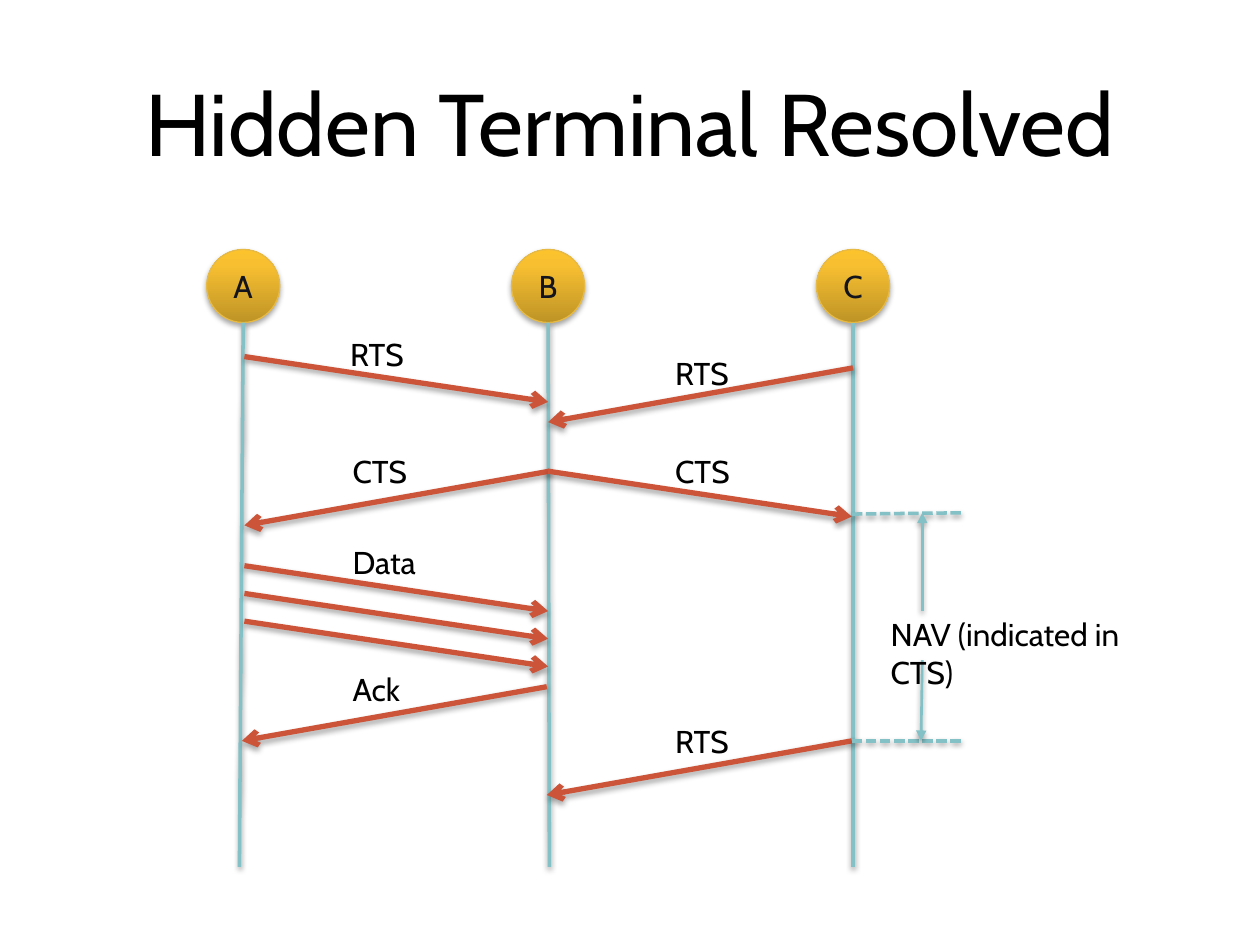
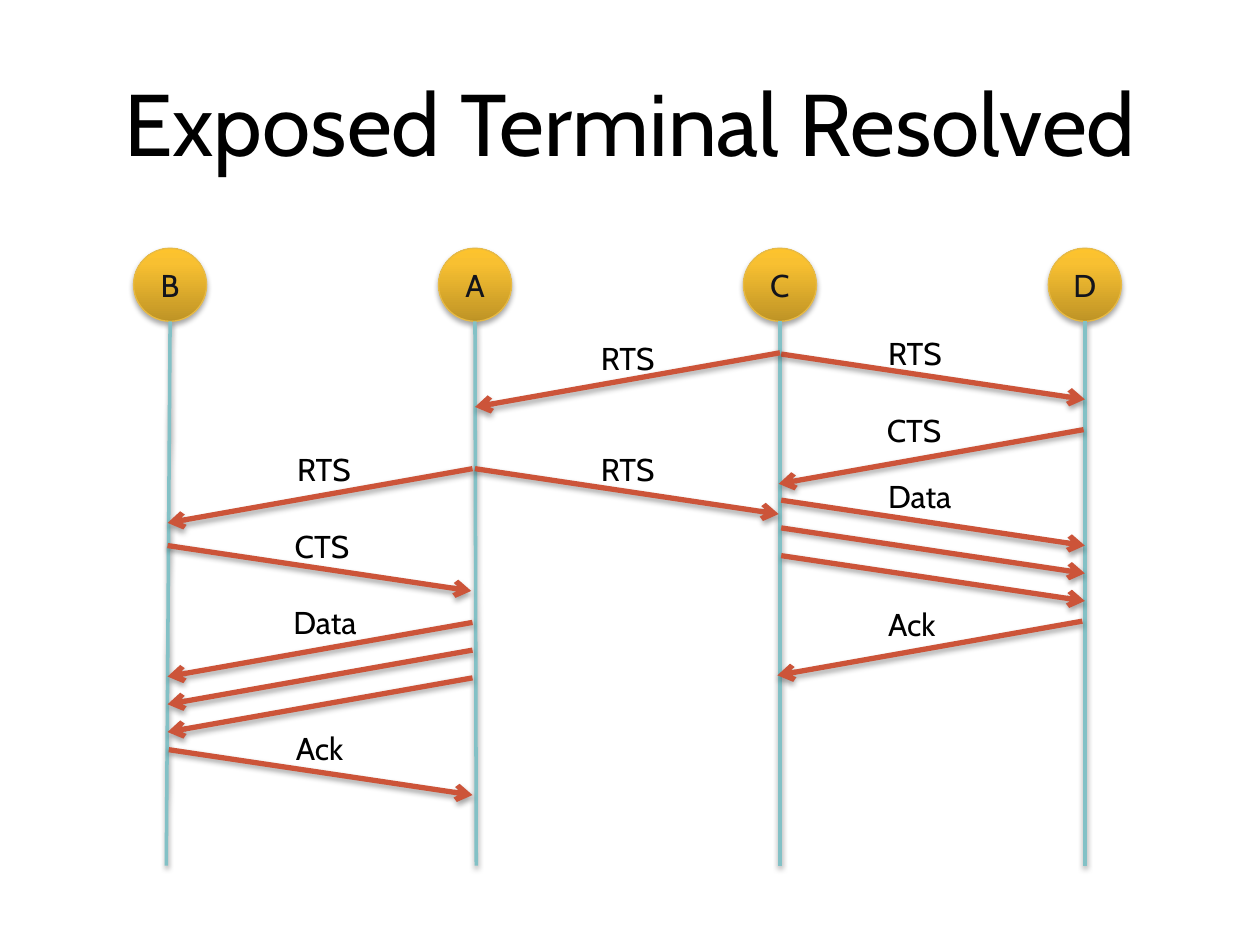
from lxml.etree import SubElement
from pptx import Presentation
from pptx.dml.color import RGBColor
from pptx.enum.dml import MSO_LINE
from pptx.enum.shapes import MSO_CONNECTOR, MSO_SHAPE
from pptx.enum.text import MSO_ANCHOR as Anchor, MSO_AUTO_SIZE as Fit, PP_ALIGN as Align
from pptx.oxml import parse_xml
from pptx.oxml.ns import nsdecls, qn
from pptx.util import Pt

PX = 9144  # 100 px to the inch
FONT = "Cabin"
HEX = {"ink": "000000", "name": "13141C", "rim": "E7BA45", "life": "83C1C6",
       "msg": "CC5439", "low": "BF9426", "mid": "F8C031", "top": "FDC32D"}

GOLD = f"""<a:gradFill {nsdecls("a")} rotWithShape="1"><a:gsLst>
<a:gs pos="0"><a:srgbClr val="{HEX['low']}"/></a:gs>
<a:gs pos="80000"><a:srgbClr val="{HEX['mid']}"/></a:gs>
<a:gs pos="100000"><a:srgbClr val="{HEX['top']}"/></a:gs>
</a:gsLst><a:lin ang="16200000" scaled="0"/></a:gradFill>"""
SHADE = f"""<a:effectLst {nsdecls("a")}>
<a:outerShdw blurRad="40000" dist="%d" dir="5400000" rotWithShape="0">
<a:srgbClr val="000000"><a:alpha val="%d"/></a:srgbClr></a:outerShdw></a:effectLst>"""
DEEP = SHADE % (23000, 35000)
SOFT = SHADE % (20000, 38000)

BALL = 58        # node diameter
LANE = 242       # gap between lifelines
LEAN = (-3, 1, 0, 0)
PITCH = 22       # gap between data frames
RIGHT, LEFT = (241, 36), (-242, 43)   # run and drop of a message
WIDE = {"RTS": 63, "CTS": 63, "Data": 71, "Ack": 60}

# Message: label, label left and top, way, start x and y, number of arrows
SCENES = [
    {"title": "Hidden Terminal Resolved", "nodes": "ABC", "x": 193, "y": 198, "msgs": [
        ("RTS", 268, 261, RIGHT, 194, 283, 1),
        ("RTS", 526, 276, LEFT, 677, 292, 1),
        ("CTS", 270, 354, LEFT, 436, 374, 1),
        ("CTS", 526, 354, RIGHT, 435, 374, 1),
        ("Data", 270, 426, RIGHT, 194, 449, 3),
        ("Ack", 270, 527, LEFT, 434, 545, 1),
        ("RTS", 526, 568, LEFT, 676, 588, 1)]},
    {"title": "Exposed Terminal Resolved", "nodes": "BACD", "x": 135, "y": 197, "msgs": [
        ("RTS", 695, 260, RIGHT, 620, 281, 1),
        ("RTS", 467, 264, LEFT, 619, 280, 1),
        ("CTS", 694, 321, LEFT, 860, 341, 1),
        ("RTS", 467, 352, RIGHT, 377, 372, 1),
        ("Data", 695, 374, RIGHT, 620, 397, 3),
        ("Ack", 695, 475, LEFT, 859, 493, 1),
        ("RTS", 226, 352, LEFT, 375, 372, 1),
        ("CTS", 224, 413, RIGHT, 133, 433, 1),
        ("Data", 223, 474, LEFT, 375, 494, 3),
        ("Ack", 225, 574, RIGHT, 134, 595, 1)]},
]


def put(shape, text, size=18, color="ink", align=Align.LEFT,
        anchor=Anchor.TOP, wrap=False, fit=Fit.NONE):
    frame = shape.text_frame
    frame.text = text
    frame.word_wrap, frame.auto_size = wrap, fit
    frame.vertical_anchor = anchor
    para = frame.paragraphs[0]
    para.alignment = align
    font = para.runs[0].font
    font.name, font.size = FONT, Pt(size)
    font.color.rgb = RGBColor.from_string(HEX[color])


def link(shapes, x1, y1, x2, y2, color="life", width=2, shade=SOFT,
         dash=None, head=None, tail=None):
    line = shapes.add_connector(MSO_CONNECTOR.STRAIGHT, *(v * PX for v in (x1, y1, x2, y2)))
    line.line.color.rgb = RGBColor.from_string(HEX[color])
    line.line.width = Pt(width)
    if dash:
        line.line.dash_style = dash
    props = line.element.spPr
    for tag, kind in (("a:headEnd", head), ("a:tailEnd", tail)):
        if kind:
            SubElement(props.find(qn("a:ln")), qn(tag), type=kind)
    props.append(parse_xml(shade))


deck = Presentation()
deck.slide_width, deck.slide_height = 1000 * PX, 750 * PX

for scene in SCENES:
    slide = deck.slides.add_slide(deck.slide_layouts[5])
    shapes = slide.shapes
    title = shapes.title
    title.left, title.top, title.width, title.height = (v * PX for v in (50, 50, 900, 125))
    put(title, scene["title"], size=50, align=Align.CENTER, wrap=True)

    top = scene["y"]
    foot = top + BALL
    for i, name in enumerate(scene["nodes"]):
        x = scene["x"] + i * LANE
        ball = shapes.add_shape(MSO_SHAPE.OVAL, (x - BALL // 2) * PX, top * PX,
                                BALL * PX, BALL * PX)
        ball.element.spPr.append(parse_xml(GOLD))
        ball.line.color.rgb = RGBColor.from_string(HEX["rim"])
        ball.line.width = Pt(0.75)
        ball.element.spPr.append(parse_xml(DEEP))
        put(ball, name, color="name", align=Align.CENTER, anchor=Anchor.MIDDLE)
        link(shapes, x, foot, x + LEAN[i], foot + 432)

    for label, left, high, (run, drop), x, y, count in scene["msgs"]:
        for i in range(count):
            start = y + i * PITCH
            link(shapes, x, start, x + run, start + drop, color="msg", width=3,
                 shade=DEEP, tail="arrow")
        box = shapes.add_textbox(left * PX, high * PX, WIDE[label] * PX, 40 * PX)
        put(box, label, fit=Fit.SHAPE_TO_FIT_TEXT)

# Waiting time of C on the first slide
shapes = deck.slides[0].shapes
link(shapes, 676, 408, 765, 407, dash=MSO_LINE.SQUARE_DOT)
link(shapes, 676, 588, 765, 588, dash=MSO_LINE.SQUARE_DOT)
link(shapes, 732, 407, 732, 485, width=1.5, head="triangle")
link(shapes, 732, 524, 731, 588, width=1.5, tail="triangle")
note = shapes.add_textbox(697 * PX, 483 * PX, 240 * PX, 70 * PX)
put(note, "NAV (indicated in CTS)", wrap=True)

deck.save("out.pptx")
